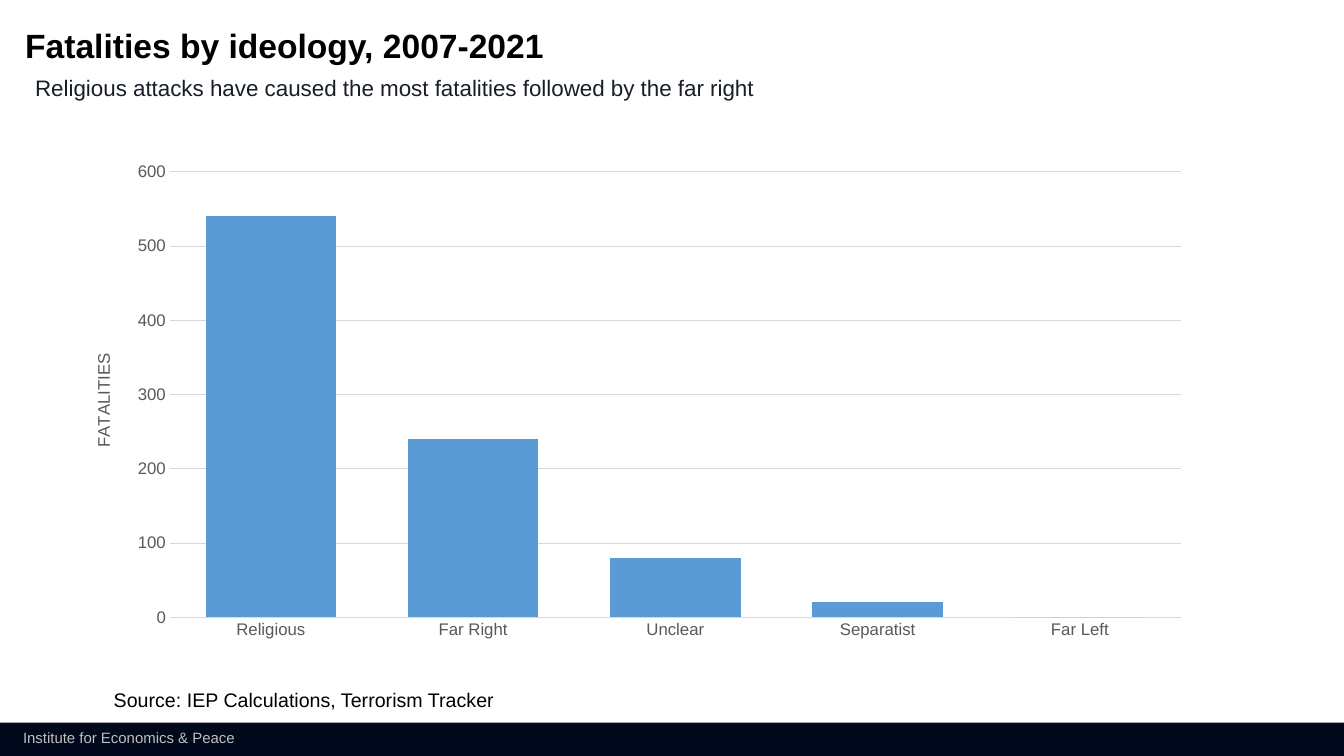
import pptx
import pptx.chart.data
import pptx.dml.color
import pptx.enum.chart
import pptx.enum.shapes
import pptx.enum.text
import pptx.oxml
import pptx.oxml.ns
import pptx.util

RGBColor = pptx.dml.color.RGBColor
Inches = pptx.util.Inches
Pt = pptx.util.Pt

WHITE = RGBColor(0xFF, 0xFF, 0xFF)
BLACK = RGBColor(0x00, 0x00, 0x00)
NAVY = RGBColor(0x00, 0x08, 0x1C)
INK = RGBColor(0x18, 0x1E, 0x28)
SILVER = RGBColor(0xBF, 0xBF, 0xBF)
GREY = RGBColor(0x59, 0x59, 0x59)
GRID = RGBColor(0xD9, 0xD9, 0xD9)
BLUE = RGBColor(0x5B, 0x9B, 0xD5)

# Content
WIDTH, HEIGHT = 13.33, 7.5
FOOTER_HEIGHT = 0.33
MARGIN = 0.25
FONT = "Arial"
# text, (left, top, width, height), size, colour, bold, padded, wraps
TEXTS = [
    ("Institute for Economics & Peace", (0.13, 7.18, 2.32, 0.28), 10.7, SILVER, False, True, False),
    ("Fatalities by ideology, 2007-2021", (MARGIN, 0.29, 11.23, 0.4), 24, BLACK, True, False, True),
    ("Religious attacks have caused the most fatalities followed by the far right",
     (MARGIN, 0.69, 10.64, 0.37), 16, INK, False, True, True),
    ("Source: IEP Calculations, Terrorism Tracker", (1.03, 6.78, 4.83, 0.34), 14, BLACK, False, True, True),
]
FATALITIES = {"Religious": 540, "Far Right": 240, "Unclear": 80, "Separatist": 20, "Far Left": 0}
AXIS_TITLE = "FATALITIES"
CHART_AREA = (0.67, 1.51, 11.27, 4.91)
# Shares of the chart area
PLOT_LAYOUT = {"x": 0.09, "y": 0.04, "w": 0.89, "h": 0.9}
TITLE_LAYOUT = {"x": 0.02, "y": 0.4}


def add_text(page, text, area, size, colour, bold, padded, wraps):
    box = page.shapes.add_textbox(*map(Inches, area))
    frame = box.text_frame
    frame.word_wrap = wraps
    para = frame.paragraphs[0]
    if not padded:
        frame.margin_left = frame.margin_right = frame.margin_top = frame.margin_bottom = 0
        para.line_spacing = 0.9
    span = para.add_run()
    span.text = text
    style_font(span.font, size, colour, bold)


def style_font(font, size, colour, bold=False):
    font.name = FONT
    font.size = Pt(size)
    font.bold = bold
    font.color.rgb = colour


def make_layout(shares, inner=False):
    target = '<c:layoutTarget val="inner"/>' if inner else ""
    modes = "".join(f'<c:{key}Mode val="edge"/>' for key in "xy")
    values = "".join(f'<c:{key} val="{share}"/>' for key, share in shares.items())
    return pptx.oxml.parse_xml(
        f'<c:layout {pptx.oxml.ns.nsdecls("c")}><c:manualLayout>'
        f'{target}{modes}{values}</c:manualLayout></c:layout>')


def set_layout(parent, layout, position):
    for old in parent.findall(pptx.oxml.ns.qn("c:layout")):
        parent.remove(old)
    parent.insert(position, layout)


def add_fatalities_chart(page):
    data = pptx.chart.data.CategoryChartData()
    data.categories = list(FATALITIES)
    data.add_series("Series 1", list(FATALITIES.values()))
    chart = page.shapes.add_chart(
        pptx.enum.chart.XL_CHART_TYPE.COLUMN_CLUSTERED, *map(Inches, CHART_AREA), data).chart
    chart.has_legend = False
    chart.has_title = False
    chart.font.name = "Calibri"
    chart.font.size = Pt(10)
    chart.font.color.rgb = BLACK

    # Columns
    plot = chart.plots[0]
    plot.vary_by_categories = False
    plot.gap_width = 55
    plot.overlap = -27
    fill = plot.series[0].format.fill
    fill.solid()
    fill.fore_color.rgb = BLUE

    # Axes
    categories, values = chart.category_axis, chart.value_axis
    for axis in (categories, values):
        axis.major_tick_mark = axis.minor_tick_mark = pptx.enum.chart.XL_TICK_MARK.NONE
        style_font(axis.tick_labels.font, 12, GREY)
    values.minimum_scale, values.maximum_scale, values.major_unit = 0, 600, 100
    values.format.line.fill.background()
    values.has_major_gridlines = True
    for line in (categories.format.line, values.major_gridlines.format.line):
        line.color.rgb = GRID
        line.width = Pt(0.75)

    # Axis title
    title = values.axis_title
    frame = title.text_frame
    span = frame.paragraphs[0].add_run()
    span.text = AXIS_TITLE
    style_font(span.font, 12, GREY)
    body = frame.paragraphs[0]._p.getparent().find(pptx.oxml.ns.qn("a:bodyPr"))
    body.set("rot", "-5400000")
    body.set("vert", "horz")
    set_layout(title._element, make_layout(TITLE_LAYOUT), 1)
    set_layout(chart._chartSpace.chart.plotArea, make_layout(PLOT_LAYOUT, inner=True), 0)


def main():
    deck = pptx.Presentation()
    deck.slide_width, deck.slide_height = Inches(WIDTH), Inches(HEIGHT)
    page = deck.slides.add_slide(deck.slide_layouts[6])
    page.background.fill.solid()
    page.background.fill.fore_color.rgb = WHITE

    # Footer band
    band = page.shapes.add_shape(
        pptx.enum.shapes.MSO_SHAPE.RECTANGLE, 0, Inches(HEIGHT - FOOTER_HEIGHT),
        deck.slide_width, Inches(FOOTER_HEIGHT))
    band.shadow.inherit = False
    band.fill.solid()
    band.fill.fore_color.rgb = NAVY
    band.line.fill.background()

    # Texts and chart
    for entry in TEXTS:
        add_text(page, *entry)
    add_fatalities_chart(page)
    deck.save("out.pptx")


if __name__ == "__main__":
    main()
